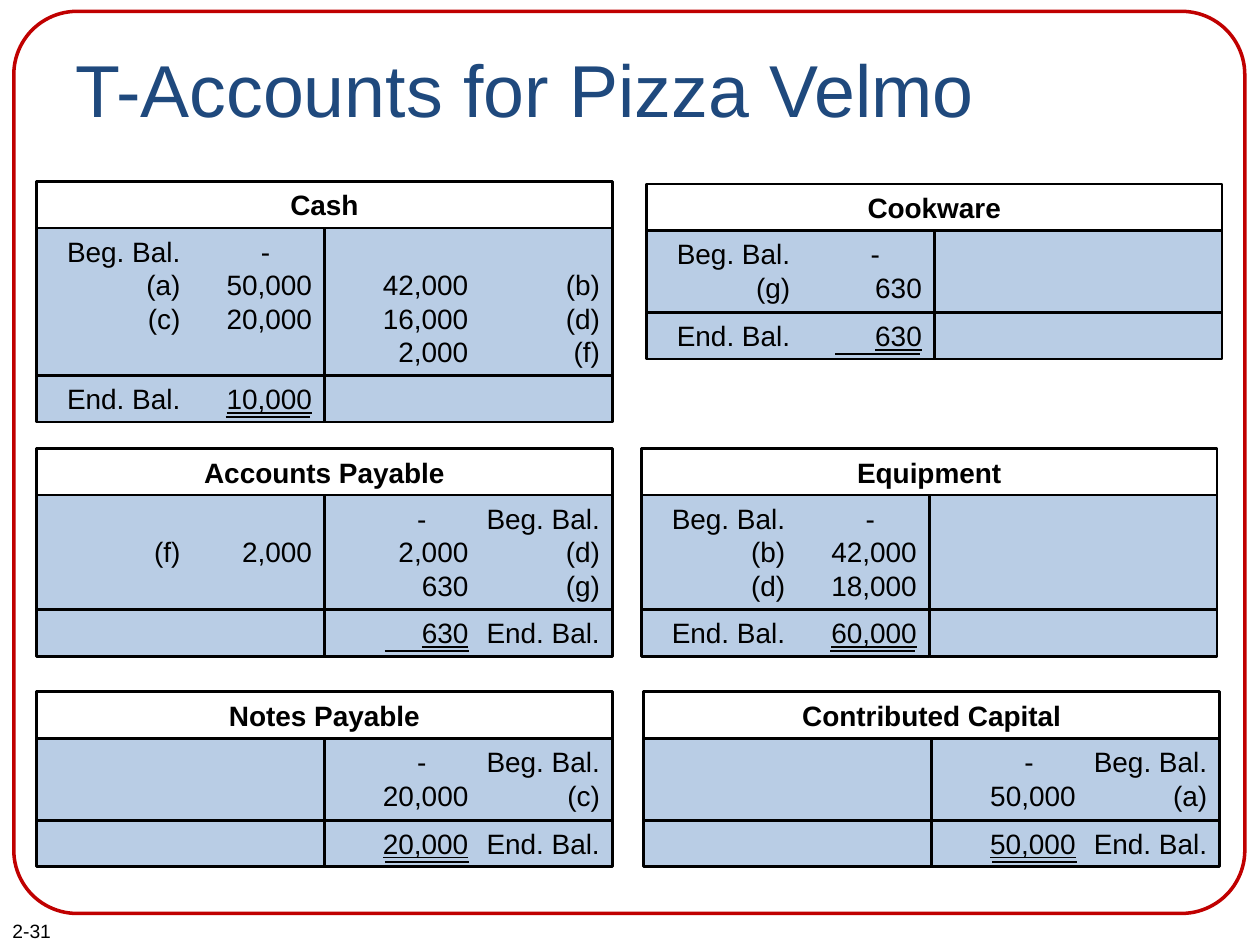
from collections import namedtuple
from pptx import Presentation
from pptx.dml.color import RGBColor
from pptx.enum.shapes import MSO_CONNECTOR as LINE, MSO_SHAPE as SHAPE
from pptx.enum.text import MSO_ANCHOR as ANCHOR, MSO_AUTO_SIZE as FIT, PP_ALIGN as ALIGN
from pptx.oxml.ns import qn
from pptx.util import Inches, Pt

BLACK, BLUE, NAVY, RED = "000000", "B9CDE5", "1F497D", "C00000"
HALF, BAND, ROW, PADDING = 2.285, 0.37, 0.26, 0.13
LINE_GAP, INSET, DASH_INDENT = 19, 3.6, 22
BEGIN, END, DASH = "Beg. Bal.", "End. Bal.", "-"

Account = namedtuple("Account", "name left top rows debit credit side balance")

ACCOUNTS = [
    Account("Cash", 0.29, 1.44, 4,
            [[BEGIN, "(a)", "(c)"], [DASH, "50,000", "20,000"]],
            [["", "42,000", "16,000", "2,000"], ["", "(b)", "(d)", "(f)"]], 0, "10,000"),
    Account("Equipment", 5.09, 3.56, 3,
            [[BEGIN, "(b)", "(d)"], [DASH, "42,000", "18,000"]], [], 0, "60,000"),
    Account("Cookware", 5.13, 1.46, 2,
            [[BEGIN, "(g)"], [DASH, "630"]], [], 0, "630"),
    Account("Accounts Payable", 0.29, 3.56, 3,
            [["", "(f)"], ["", "2,000"]],
            [[DASH, "2,000", "630"], [BEGIN, "(d)", "(g)"]], 1, "630"),
    Account("Notes Payable", 0.29, 5.49, 2, [],
            [[DASH, "20,000"], [BEGIN, "(c)"]], 1, "20,000"),
    Account("Contributed Capital", 5.11, 5.49, 2, [],
            [[DASH, "50,000"], [BEGIN, "(a)"]], 1, "50,000"),
]


def colour(value):
    """Turn a hex string into a colour."""
    return RGBColor.from_string(value)


def style_para(para, size, ink=BLACK, bold=False, underline=False):
    """Format every run of a paragraph."""
    for span in para.runs:
        font = span.font
        font.name, font.size, font.bold = "Arial", Pt(size), bold
        font.underline = underline
        font.color.rgb = colour(ink)


def add_outline(shapes, preset, left, top, width, height, line, weight, fill=None):
    """Add an outlined shape, filled or hollow."""
    box = shapes.add_shape(preset, Inches(left), Inches(top), Inches(width), Inches(height))
    box.shadow.inherit = False
    if fill:
        box.fill.solid()
        box.fill.fore_color.rgb = colour(fill)
    else:
        box.fill.background()
    box.line.color.rgb = colour(line)
    box.line.width = Pt(weight)
    return box


def add_label(page, text, left, top, width, height, size, ink):
    """Add a wrapped text box with one line of text."""
    box = page.shapes.add_textbox(Inches(left), Inches(top), Inches(width), Inches(height))
    box.text_frame.word_wrap = True
    box.text_frame.text = text
    style_para(box.text_frame.paragraphs[0], size, ink)


def add_cell(shapes, left, top, height, columns, rows, underlined=None):
    """Add one side of an account, its text flowing through two columns."""
    box = add_outline(shapes, SHAPE.RECTANGLE, left, top, HALF, height, BLACK, 1.5, BLUE)
    if not columns:
        return
    frame = box.text_frame
    frame.word_wrap, frame.auto_size = True, FIT.NONE
    frame.vertical_anchor = ANCHOR.TOP
    frame.margin_top = Pt(INSET + columns[0].count("") * LINE_GAP)
    frame._txBody.bodyPr.set("numCol", "2")
    frame.text = "\n".join(entry for column in columns for entry in column if entry)
    paras = iter(frame.paragraphs)
    for index, column in enumerate(columns):
        entries = [next(paras) for entry in column if entry]
        for para in entries:
            para.alignment = ALIGN.RIGHT
            if para.text == DASH:
                para.alignment = ALIGN.CENTER
                para._p.get_or_add_pPr().set("marL", str(Pt(DASH_INDENT)))
            style_para(para, 16, underline=index == underlined)
        if index == 0 and len(column) < rows:
            entries[-1].space_after = Pt((rows - len(column)) * LINE_GAP)


def add_rule(shapes, left, right, height):
    """Add the second line of a double underline."""
    rule = shapes.add_connector(LINE.STRAIGHT, Inches(left), Inches(height),
                                Inches(right), Inches(height))
    rule.line.color.rgb = colour(BLACK)
    rule.line.width = Pt(1.25)
    properties = rule._element.spPr
    properties.append(properties.makeelement(qn("a:effectLst"), {}))


def add_account(page, account):
    """Add a grouped T-account with heading, entries and ending balance."""
    shapes = page.shapes.add_group_shape().shapes
    lefts = account.left, account.left + HALF
    body_top = account.top + BAND
    body_height = PADDING + account.rows * ROW
    closing_top = body_top + body_height

    heading = add_outline(shapes, SHAPE.RECTANGLE, account.left, account.top,
                          2 * HALF, BAND, BLACK, 1.5)
    heading.text_frame.text = account.name
    para = heading.text_frame.paragraphs[0]
    para.alignment = ALIGN.CENTER
    style_para(para, 16, bold=True)

    closings = [[], []]
    closings[account.side] = ([[account.balance], [END]] if account.side
                              else [[END], [account.balance]])
    for left, columns, closing in zip(lefts, (account.debit, account.credit), closings):
        add_cell(shapes, left, body_top, body_height, columns, account.rows)
        add_cell(shapes, left, closing_top, BAND, closing, 1, 1 - account.side)
    start = lefts[account.side] + (0.48 if account.side else 1.5)
    add_rule(shapes, start, start + 0.67, closing_top + 0.33)


def main():
    """Build the slide and save the deck."""
    deck = Presentation()
    deck.slide_width, deck.slide_height = Inches(10), Inches(7.5)
    page = deck.slides.add_slide(deck.slide_layouts[6])
    add_label(page, "2-31", 0, 7.25, 1.42, 0.29, 11, BLACK)
    border = add_outline(page.shapes, SHAPE.ROUNDED_RECTANGLE, 0.11, 0.09, 9.77, 7.16, RED, 2)
    border.adjustments[0] = 0.07
    add_label(page, "T-Accounts for Pizza Velmo", 0.5, 0.3, 9, 1.25, 42, NAVY)
    for account in ACCOUNTS:
        add_account(page, account)
    deck.save("out.pptx")


if __name__ == "__main__":
    main()
